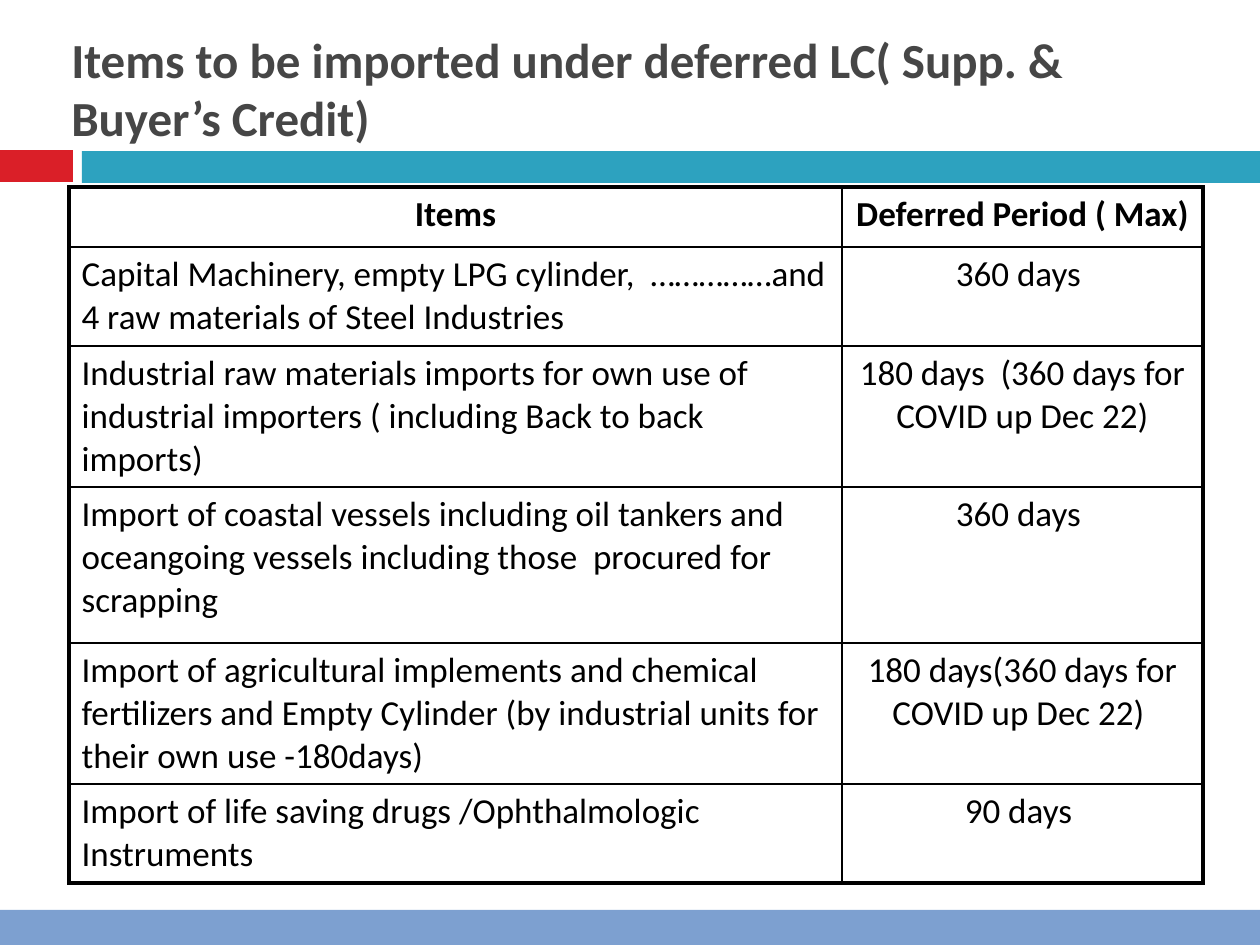
from lxml import etree
from pptx import Presentation, util as u
from pptx.dml.color import RGBColor
from pptx.enum import shapes, text
from pptx.oxml.ns import qn

SCALE = 914400 // 126
THIN, THICK = 1, 2.25
COLS = [773, 361]
ROWS = [60, 99, 141, 156, 141, 99]
ITEMS = [
    ("Items", "Deferred Period ( Max)"),
    ("Capital Machinery, empty LPG cylinder,  ……………and 4 raw materials of Steel Industries",
     "360 days "),
    ("Industrial raw materials imports for own use of industrial importers "
     "( including Back to back imports)",
     "180 days  (360 days for COVID up Dec 22)"),
    ("Import of coastal vessels including oil tankers and oceangoing vessels "
     "including those  procured for scrapping",
     "360 days "),
    ("Import of agricultural implements and chemical fertilizers and Empty Cylinder "
     "(by industrial units for their own use -180days)",
     "180 days(360 days for COVID up Dec 22) "),
    ("Import of life saving drugs /Ophthalmologic Instruments", "90 days "),
]


def px(n):
    """Turn pixels into EMU."""
    return u.Emu(n * SCALE)


def color(value):
    """Turn a hex string into a colour."""
    return RGBColor.from_string(value)


def write(tf, content, size=20, fill="000000", bold=False, align=text.PP_ALIGN.LEFT):
    """Write one formatted paragraph into a text frame."""
    tf.word_wrap = True
    p = tf.paragraphs[0]
    p.alignment = align
    r = p.add_run()
    r.text = content
    r.font.name = "Calibri"
    r.font.size = u.Pt(size)
    r.font.bold = bold
    r.font.color.rgb = color(fill)


def add_bar(s, x, y, w, h, fill):
    """Add a plain coloured bar."""
    sp = s.shapes.add_shape(shapes.MSO_SHAPE.RECTANGLE, px(x), px(y), px(w), px(h))
    sp.shadow.inherit = False
    sp.fill.solid()
    sp.fill.fore_color.rgb = color(fill)
    sp.line.fill.background()


def add_title(s, content):
    """Add the slide heading."""
    sp = s.shapes.add_textbox(px(59), px(21), px(1134), px(132))
    sp.text_frame.vertical_anchor = text.MSO_ANCHOR.BOTTOM
    write(sp.text_frame, content, size=28, fill="464646", bold=True)


def set_borders(cell, widths):
    """Draw black cell borders from a map of side to points."""
    tc_pr = cell._tc.get_or_add_tcPr()
    for i, (side, width) in enumerate(widths.items()):
        ln = etree.Element(qn(f"a:ln{side}"), w=str(u.Pt(width)))
        solid = etree.SubElement(ln, qn("a:solidFill"))
        etree.SubElement(solid, qn("a:srgbClr"), val="000000")
        tc_pr.insert(i, ln)


def add_items_table(s):
    """Add the table of items and their deferred periods."""
    frame = s.shapes.add_table(len(ROWS), len(COLS), px(69), px(187),
                               px(sum(COLS)), px(sum(ROWS)))
    table = frame.table
    table.horz_banding = False
    for column, width in zip(table.columns, COLS):
        column.width = px(width)
    for i, (height, row) in enumerate(zip(ROWS, ITEMS)):
        table.rows[i].height = px(height)
        for j, content in enumerate(row):
            cell = table.cell(i, j)
            cell.fill.background()
            centred = j == 1 or i == 0
            write(cell.text_frame, content, bold=i == 0,
                  align=text.PP_ALIGN.CENTER if centred else text.PP_ALIGN.LEFT)
            set_borders(cell, {
                "L": THICK if j == 0 else THIN,
                "R": THICK if j == len(COLS) - 1 else THIN,
                "T": THICK if i == 0 else THIN,
                "B": THICK if i == len(ROWS) - 1 else THIN,
            })


def main():
    """Build the slide and save it."""
    prs = Presentation()
    prs.slide_width, prs.slide_height = px(1260), px(945)
    s = prs.slides.add_slide(prs.slide_layouts[6])
    add_bar(s, 0, 150, 73, 32, "DA1F28")
    add_bar(s, 82, 151, 1178, 32, "2DA2BF")
    add_bar(s, 0, 910, 1260, 35, "7DA0D0")
    add_title(s, "Items to be imported under deferred LC( Supp. & Buyer’s Credit)")
    add_items_table(s)
    prs.save("out.pptx")


if __name__ == "__main__":
    main()
